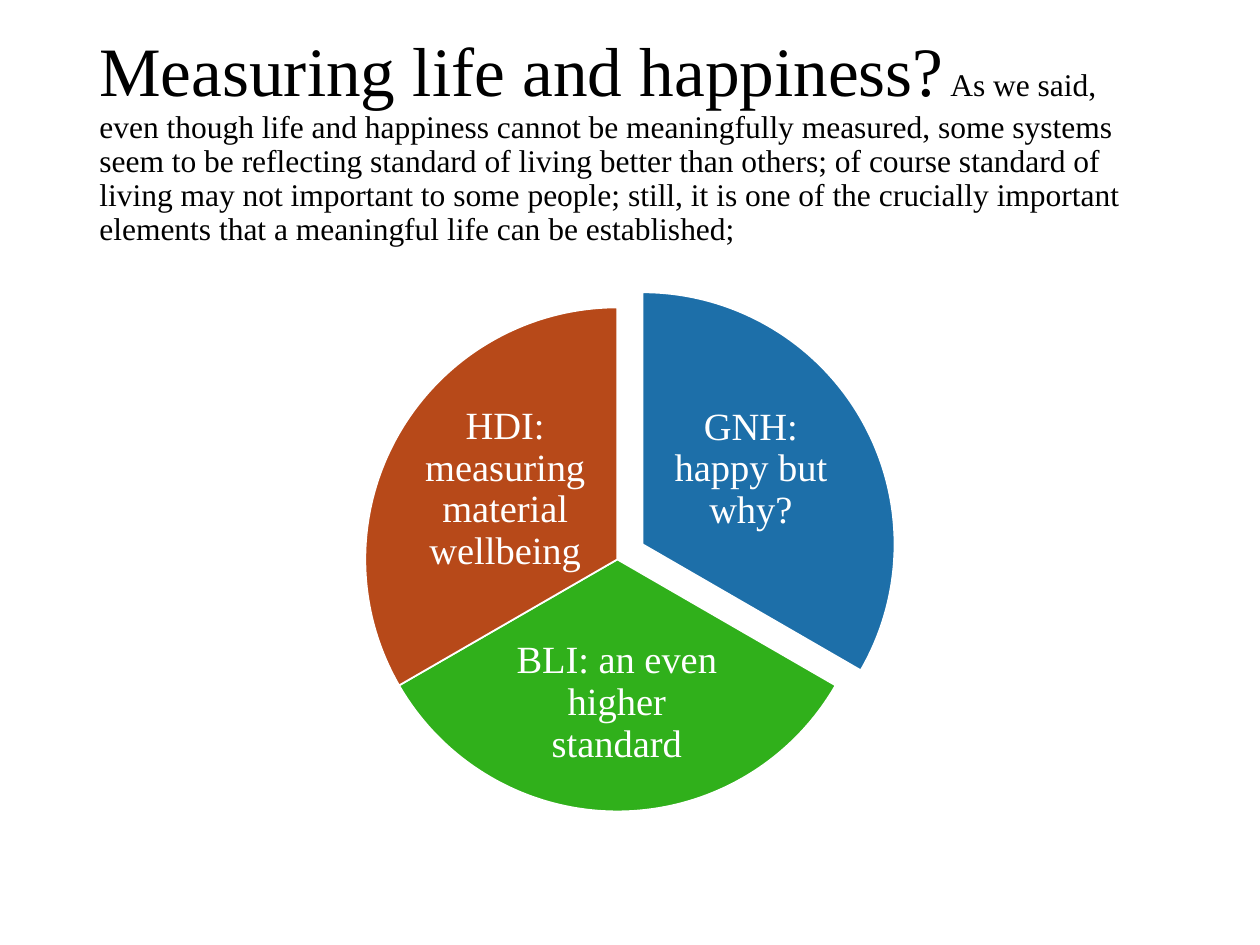
from pptx import Presentation
from pptx.dml.color import RGBColor as Rgb
from pptx.enum.shapes import MSO_SHAPE as Geo
from pptx.enum.text import MSO_ANCHOR as Anchor, PP_ALIGN as Align
from pptx.util import Inches, Pt

BLACK = Rgb(0x00, 0x00, 0x00)
WHITE = Rgb(0xFF, 0xFF, 0xFF)
BLUE = Rgb(0x1D, 0x6F, 0xA9)
GREEN = Rgb(0x30, 0xB0, 0x1B)
RUST = Rgb(0xB7, 0x49, 0x19)

COLS, ROWS = 100, 75
FONT = "Times New Roman"
TURN = 0.6  # pie adjustment per degree

HEAD = "Measuring life and happiness?"
BODY = (
    " As we said, even though life and happiness cannot be meaningfully "
    "measured, some systems seem to be reflecting standard of living better "
    "than others; of course standard of living may not important to some "
    "people; still, it is one of the crucially important elements that a "
    "meaningful life can be established;"
)


class Deck:
    """Style and current slide; places are columns and rows of the grid."""

    def __init__(self):
        self.prs = Presentation()
        self.prs.slide_width, self.prs.slide_height = Inches(10), Inches(7.5)
        self.slide = self.prs.slides.add_slide(self.prs.slide_layouts[6])
        self.cell = self.prs.slide_width / COLS, self.prs.slide_height / ROWS

    def place(self, box):
        return [round(n * self.cell[i % 2]) for i, n in enumerate(box)]

    def text(self, home, box, runs, color, align, inset=None):
        frame = home.add_textbox(*self.place(box)).text_frame
        form = {"word_wrap": True, "vertical_anchor": Anchor.MIDDLE}
        if inset is not None:
            for side in ("left", "top", "right", "bottom"):
                form[f"margin_{side}"] = Inches(inset)
        for key, val in form.items():
            setattr(frame, key, val)
        para = frame.paragraphs[0]
        para.alignment, para.line_spacing = align, 0.9
        for words, size in runs:
            run = para.add_run()
            run.text = words
            for key, val in {"name": FONT, "size": Pt(size)}.items():
                setattr(run.font, key, val)
            run.font.color.rgb = color

    def wedge(self, home, box, start, end, color):
        pie = home.add_shape(Geo.PIE, *self.place(box))
        pie.shadow.inherit = False
        pie.adjustments[0] = start * TURN
        pie.adjustments[1] = end * TURN
        pie.fill.solid()
        pie.fill.fore_color.rgb = color
        pie.line.color.rgb = WHITE
        pie.line.width = Pt(1)


def main():
    deck = Deck()

    # Title with its running comment
    deck.text(deck.slide.shapes, (6.9, 4, 86.2, 14.5),
              [(HEAD, 39.6), (BODY, 18)], BLACK, Align.LEFT)

    # Pie of three equal wedges, the first one pulled out
    size, sweep, first = 40, 120, 270
    parts = [
        ("GNH: happy but why?", BLUE, (31, 23.2), (52.8, 30.6, 13.6, 13.3)),
        ("BLI: an even higher standard", GREEN, (29, 24.4), (39.9, 49.6, 18.1, 12.4)),
        ("HDI: measuring material wellbeing", RUST, (29, 24.4), (33.3, 32.2, 13.6, 13.3)),
    ]
    group = deck.slide.shapes.add_group_shape().shapes
    for i, (words, color, spot, box) in enumerate(parts):
        start = (first + i * sweep) % 360
        deck.wedge(group, (*spot, size, size), start, (start + sweep) % 360, color)
        deck.text(group, box, [(words, 22)], WHITE, Align.CENTER, 0.03)

    deck.prs.save("out.pptx")


if __name__ == "__main__":
    main()
